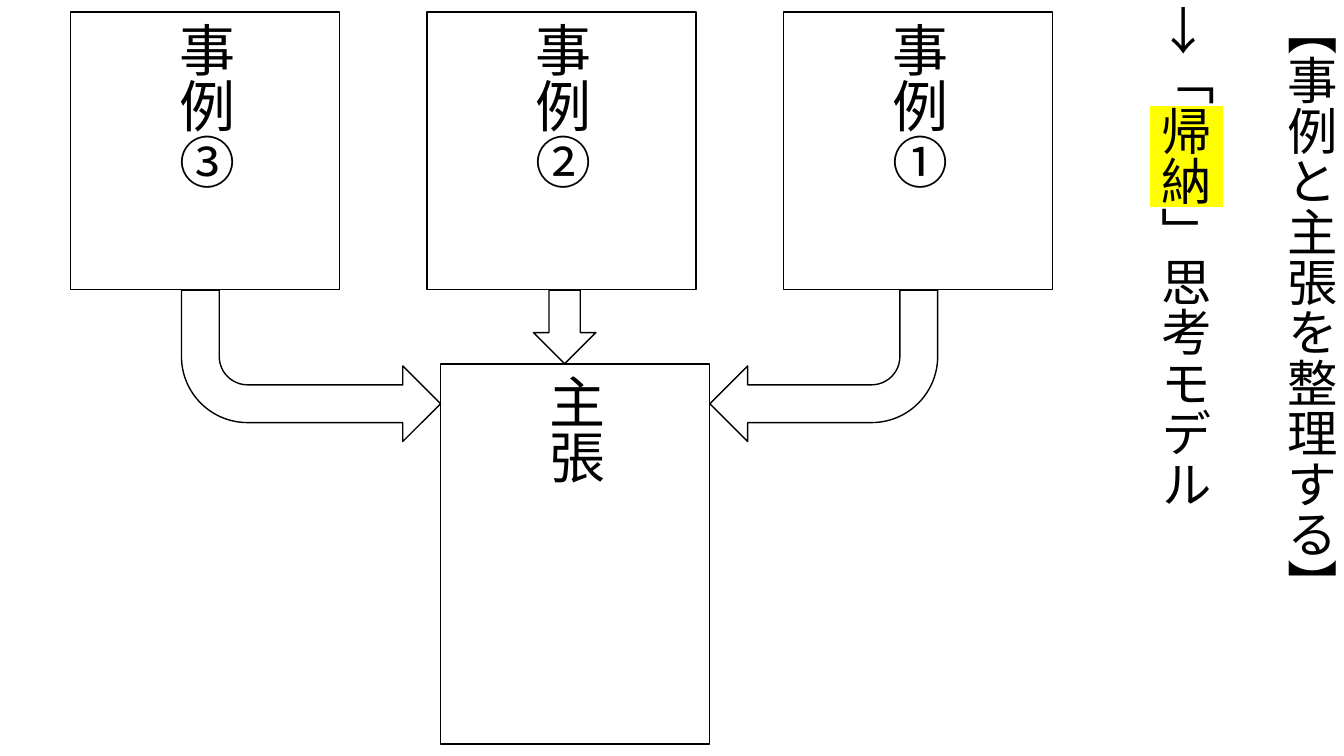
from pptx import Presentation
from pptx import util as u
from pptx.dml import color
from pptx.enum import shapes, text
from pptx.oxml import ns
from lxml import etree

# Content
HEAD = "【事例と主張を整理する】"
MODEL = [("→「", None), ("帰納", "FFFF00"), ("」思考モデル", None)]
CASES = ["事例①", "事例②", "事例③"]  # read from right to left
CLAIM = "主張"
FONT = "Noto Sans CJK JP"
BLACK, WHITE = "000000", "FFFFFF"

# Layout in inches
WIDE, TALL = 2.67, 2.75
LEFT, TOP, STEP = 0.7, 0.12, 3.535
CLAIM_BOX = (4.37, 3.61, WIDE, 3.77)
EDGE = TOP + TALL + 0.01  # arrows start below the cases
BEND = 1.5
STEMS = (1.8, 9.3)  # outer sides of the bent arrows


def rgb(code):
    return color.RGBColor.from_string(code)


def style(para, size):
    para.font.size = u.Pt(size)
    para.font.color.rgb = rgb(BLACK)
    para.font.name = FONT
    props = para._p.pPr.find(ns.qn("a:defRPr"))
    etree.SubElement(props, ns.qn("a:ea")).set("typeface", FONT)


def stand(frame):
    """Set the text in vertical columns."""
    frame.word_wrap = True
    frame._txBody.bodyPr.set("vert", "eaVert")


def draw(kind, left, top, width, height):
    shape = slide.shapes.add_shape(
        kind, *(u.Inches(n) for n in (left, top, width, height)))
    shape.shadow.inherit = False
    shape.fill.solid()
    shape.fill.fore_color.rgb = rgb(WHITE)
    shape.line.color.rgb = rgb(BLACK)
    shape.line.width = u.Pt(1)
    return shape


def box(label, *place):
    frame = draw(shapes.MSO_SHAPE.RECTANGLE, *place).text_frame
    stand(frame)
    frame.vertical_anchor = text.MSO_ANCHOR.MIDDLE
    para = frame.paragraphs[0]
    para.text = label
    para.alignment = text.PP_ALIGN.CENTER
    style(para, 40)


deck = Presentation()
deck.slide_width, deck.slide_height = u.Inches(13.33), u.Inches(7.5)
slide = deck.slides.add_slide(deck.slide_layouts[1])
title = slide.shapes.title
title._element.getparent().remove(title._element)

# Heading columns
body = slide.placeholders[1]
body.left, body.top = 0, 0
body.width, body.height = u.Inches(13.33), u.Inches(7.9)
frame = body.text_frame
stand(frame)
frame.auto_size = text.MSO_AUTO_SIZE.NONE
frame.vertical_anchor = text.MSO_ANCHOR.TOP
for parts, gap in (([(HEAD, None)], 10), (MODEL, 51)):
    para = frame.paragraphs[0] if parts is not MODEL else frame.add_paragraph()
    para.line_spacing = 0.9
    para.space_before = u.Pt(gap)
    props = para._p.get_or_add_pPr()
    props.set("marL", "0")
    props.set("indent", "0")
    etree.SubElement(props, ns.qn("a:buNone"))
    style(para, 36)
    for words, mark in parts:
        run = para.add_run()
        run.text = words
        if mark:
            light = etree.SubElement(
                run._r.get_or_add_rPr(), ns.qn("a:highlight"))
            etree.SubElement(light, ns.qn("a:srgbClr")).set("val", mark)

# Cases and claim
for i, label in enumerate(CASES):
    box(label, LEFT + STEP * (len(CASES) - 1 - i), TOP, WIDE, TALL)
box(CLAIM, *CLAIM_BOX)

# Arrows from the cases to the claim
near = CLAIM_BOX[0]
far = near + WIDE
right = draw(shapes.MSO_SHAPE.BENT_ARROW, far, EDGE, STEMS[1] - far, BEND)
draw(shapes.MSO_SHAPE.DOWN_ARROW, 5.29, EDGE, 0.62, CLAIM_BOX[1] - EDGE)
left = draw(shapes.MSO_SHAPE.BENT_ARROW, STEMS[0], EDGE, near - STEMS[0], BEND)
for arrow in (right, left):
    arrow.rotation = 180
left._element.spPr.xfrm.set("flipH", "1")

deck.save("out.pptx")
